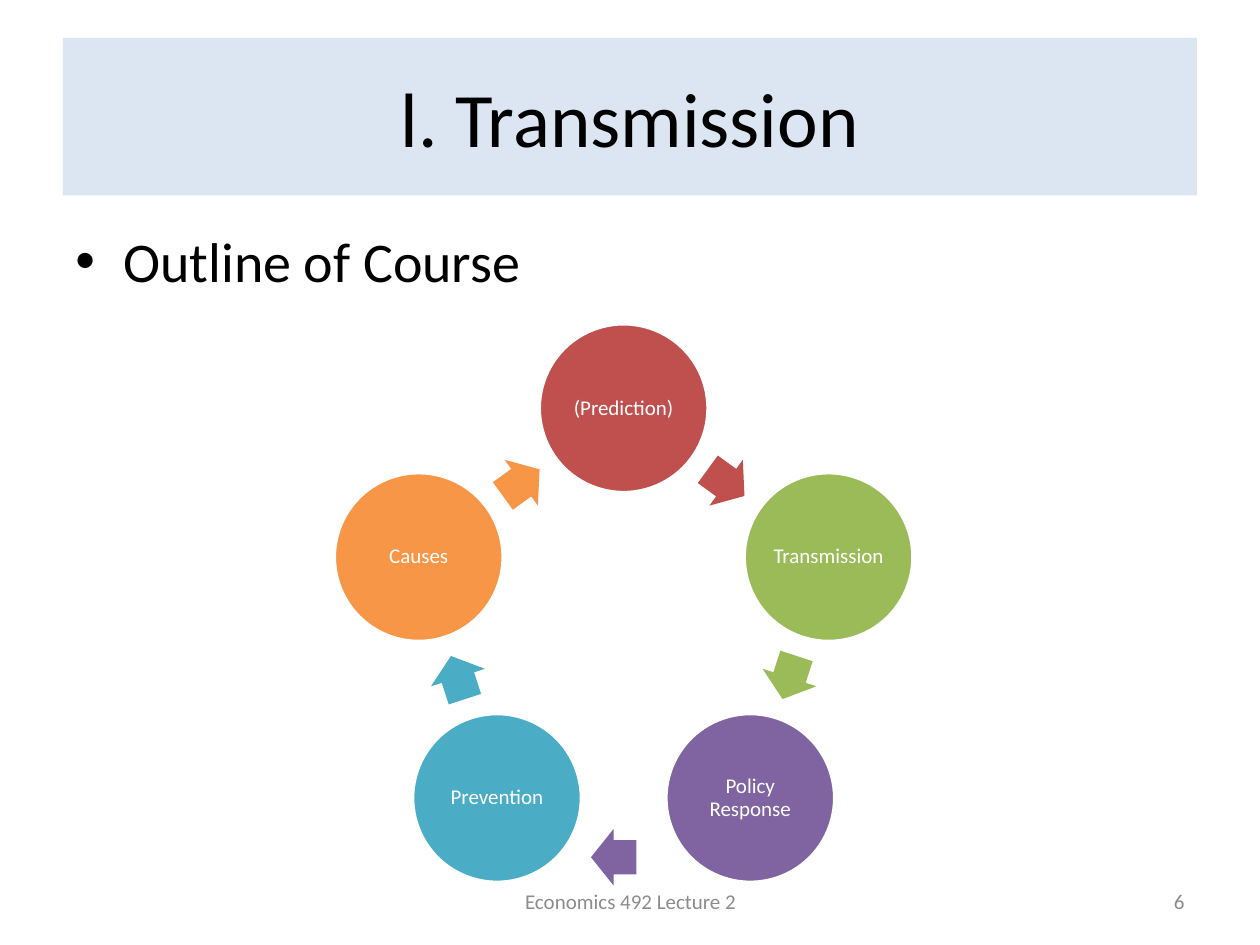
import math

import pptx
import pptx.dml.color
import pptx.enum.shapes
import pptx.enum.text
import pptx.oxml
import pptx.util
from pptx.util import Inches

SHAPE = pptx.enum.shapes.MSO_SHAPE
ALIGN = pptx.enum.text.PP_ALIGN
ANCHOR = pptx.enum.text.MSO_ANCHOR

STAGES = [
    ("(Prediction)", "C0504D"),
    ("Transmission", "9BBB59"),
    ("Policy Response", "8064A2"),
    ("Prevention", "4BACC6"),
    ("Causes", "F79646"),
]
CENTER_X, CENTER_Y, RADIUS = 4.95, 4.95, 1.71
DIAMETER = 1.34
ARROW_LENGTH, ARROW_WIDTH = 0.36, 0.45
ARROW_SHIFTS = {2: (-0.08, 0.47)}  # the bottom arrow sits below the ring


def color(value):
    return pptx.dml.color.RGBColor.from_string(value)


def write(box, text, size=12, ink="000000", align=ALIGN.CENTER,
          anchor=ANCHOR.MIDDLE, inset=None, spacing=None):
    """Put one formatted paragraph in a box and return the paragraph."""
    frame = box.text_frame
    frame.word_wrap = True
    frame.vertical_anchor = anchor
    if inset is not None:
        frame.margin_left = frame.margin_right = Inches(inset)
        frame.margin_top = frame.margin_bottom = Inches(inset)
    para = frame.paragraphs[0]
    para.alignment = align
    para.line_spacing = spacing
    span = para.add_run()
    span.text = text
    span.font.name = "Calibri"
    span.font.size = pptx.util.Pt(size)
    span.font.color.rgb = color(ink)
    return para


def add_text(page, text, left, top, width, height, **style):
    box = page.shapes.add_textbox(
        Inches(left), Inches(top), Inches(width), Inches(height))
    return write(box, text, **style)


def add_shape(page, kind, left, top, width, height, fill, line=None):
    shape = page.shapes.add_shape(
        kind, Inches(left), Inches(top), Inches(width), Inches(height))
    shape.shadow.inherit = False
    shape.fill.solid()
    shape.fill.fore_color.rgb = color(fill)
    if line:
        shape.line.color.rgb = color(line)
        shape.line.width = pptx.util.Pt(2)
    else:
        shape.line.fill.background()
    return shape


def add_bullet(para, indent):
    props = para._p.get_or_add_pPr()
    props.set("marL", str(Inches(indent)))
    props.set("indent", str(-Inches(indent)))
    for tag, name, value in (("buFont", "typeface", "Arial"),
                             ("buChar", "char", "•")):
        mark = pptx.oxml.parse_xml(
            f'<a:{tag} xmlns:a="http://schemas.openxmlformats.org/drawingml/2006/main"'
            f' {name}="{value}"/>')
        props.append(mark)


def ring_point(degrees, radius):
    """Point on the ring, clockwise from the top."""
    angle = math.radians(degrees)
    return (CENTER_X + radius * math.sin(angle),
            CENTER_Y - radius * math.cos(angle))


def add_cycle(page):
    step = 360 / len(STAGES)
    chord_radius = RADIUS * math.cos(math.radians(step / 2))
    for index, (label, fill) in enumerate(STAGES):
        x, y = ring_point(index * step, RADIUS)
        circle = add_shape(page, SHAPE.OVAL, x - DIAMETER / 2, y - DIAMETER / 2,
                           DIAMETER, DIAMETER, fill, line="FFFFFF")
        write(circle, label, ink="FFFFFF", inset=0.02, spacing=0.9)

        turn = (index + 0.5) * step
        x, y = ring_point(turn, chord_radius)
        shift_x, shift_y = ARROW_SHIFTS.get(index, (0, 0))
        arrow = add_shape(page, SHAPE.RIGHT_ARROW,
                          x + shift_x - ARROW_LENGTH / 2,
                          y + shift_y - ARROW_WIDTH / 2,
                          ARROW_LENGTH, ARROW_WIDTH, fill)
        arrow.adjustments[0] = 0.6
        arrow.adjustments[1] = 0.5
        arrow.rotation = turn


def main():
    deck = pptx.Presentation()
    deck.slide_width, deck.slide_height = Inches(10), Inches(7.5)
    page = deck.slides.add_slide(deck.slide_layouts[6])

    title = add_shape(page, SHAPE.RECTANGLE, 0.5, 0.3, 9, 1.25, "DCE6F2")
    write(title, "l. Transmission", size=44)
    outline = add_text(page, "Outline of Course", 0.5, 1.75, 9, 4.95, size=32,
                       align=ALIGN.LEFT, anchor=ANCHOR.TOP)
    outline.space_before = pptx.util.Pt(6.4)
    add_bullet(outline, 0.38)

    add_cycle(page)

    add_text(page, "Economics 492 Lecture 2", 3.42, 6.95, 3.17, 0.4, ink="8C8C8C")
    add_text(page, "6", 7.17, 6.95, 2.33, 0.4, ink="8C8C8C", align=ALIGN.RIGHT)
    deck.save("out.pptx")


if __name__ == "__main__":
    main()
